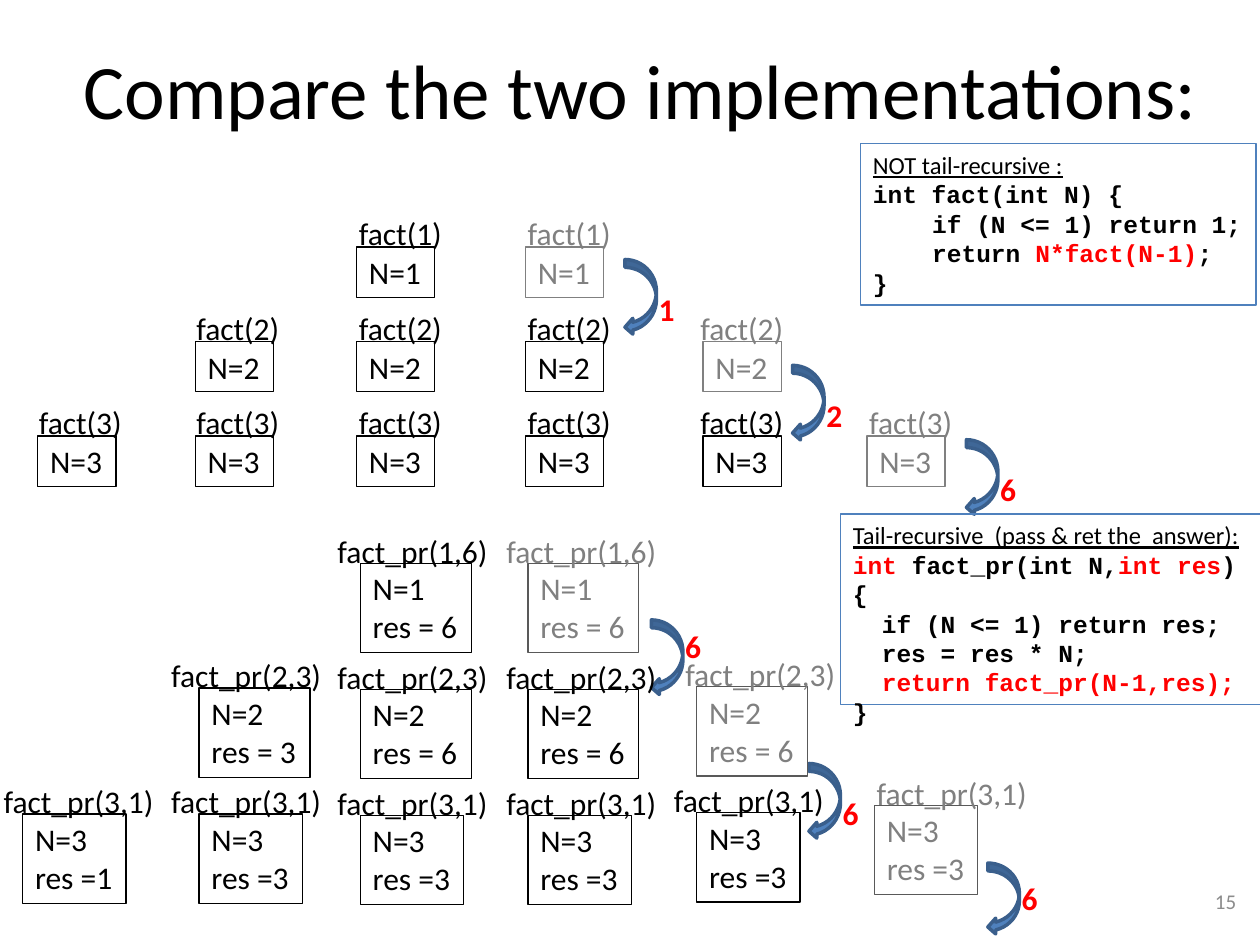
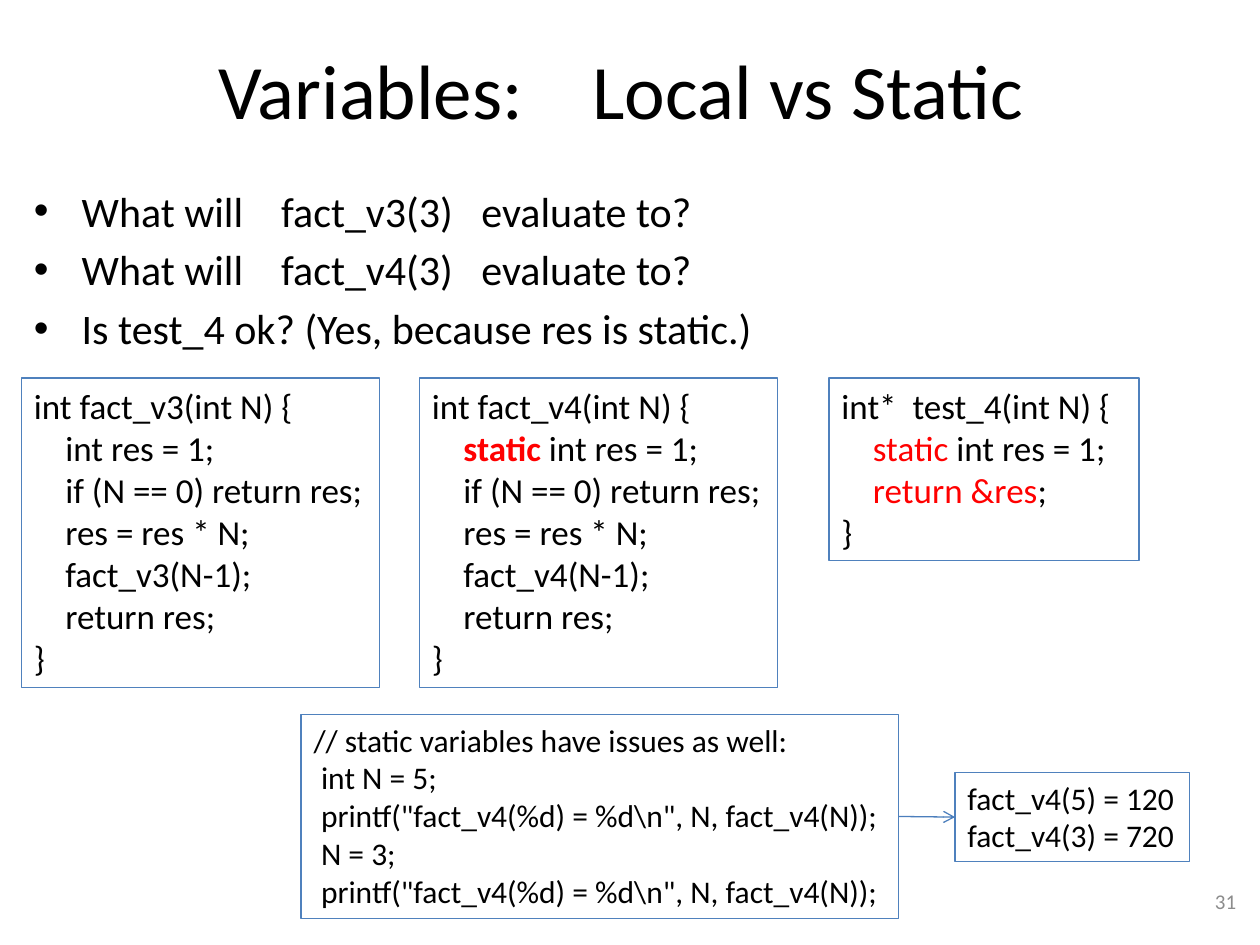
from dataclasses import dataclass
from lxml.etree import SubElement
from pptx import Presentation
from pptx.dml.color import RGBColor
from pptx.enum.shapes import MSO_CONNECTOR, MSO_SHAPE
from pptx.enum.text import MSO_ANCHOR, MSO_AUTO_SIZE, PP_ALIGN
from pptx.oxml.ns import qn
from pptx.util import Inches, Pt


@dataclass(frozen=True)
class Theme:
    sans: str = "Calibri"
    mono: str = "Courier New"
    ink: str = "000000"
    red: str = "FF0000"
    ghost: str = "808080"
    edge: str = "595959"
    page: str = "8C8C8C"
    blue: str = "4F81BD"
    rim: str = "3A5F8C"
    link: str = "4B7EBC"
    title: int = 44
    list: int = 24
    code: int = 20
    frame: int = 18
    small: int = 14
    foot: int = 12
    thin: float = 0.75


@dataclass(frozen=True)
class Run:
    text: str
    color: str = None
    bold: bool = None
    under: bool = None
    font: str = None


@dataclass(frozen=True)
class Line:
    runs: tuple
    indent: float = 0


THEME = Theme()


def rgb(code):
    return RGBColor.from_string(code)


def place(left, top, width, height):
    return [Inches(value) for value in (left, top, width, height)]


def code(*runs, indent=0):
    return Line(runs, indent)


def red(text, bold=None):
    return Run(text, THEME.red, bold)


def write(shape, lines, size, color=THEME.ink, font=THEME.sans, bold=False,
          wrap=False, fit=True, align=PP_ALIGN.LEFT, anchor=MSO_ANCHOR.TOP):
    frame = shape.text_frame
    frame.word_wrap = wrap
    frame.auto_size = MSO_AUTO_SIZE.SHAPE_TO_FIT_TEXT if fit else MSO_AUTO_SIZE.NONE
    frame.vertical_anchor = anchor
    for index, line in enumerate(lines):
        line = line if isinstance(line, Line) else code(line)
        para = frame.add_paragraph() if index else frame.paragraphs[0]
        para.alignment = align
        if line.indent:
            para._p.get_or_add_pPr().set("marL", str(Inches(line.indent)))
        for item in line.runs:
            item = item if isinstance(item, Run) else Run(item)
            run = para.add_run()
            run.text = item.text
            run.font.name = item.font or font
            run.font.size = Pt(size)
            run.font.bold = bold if item.bold is None else item.bold
            run.font.underline = item.under
            run.font.color.rgb = rgb(item.color or color)
    return shape


def text(slide, spot, lines, size, **style):
    return write(slide.shapes.add_textbox(*place(*spot)), lines, size, **style)


def box(slide, spot, lines, size, border=THEME.blue, **style):
    shape = slide.shapes.add_shape(MSO_SHAPE.RECTANGLE, *place(*spot))
    shape.shadow.inherit = False
    shape.fill.background()
    shape.line.color.rgb = rgb(border)
    shape.line.width = Pt(THEME.thin)
    return write(shape, lines, size, **style)


def start(deck, title, page, width=9):
    slide = deck.slides.add_slide(deck.slide_layouts[6])
    text(slide, (0.5, 0.08, width, 1.25), [title], THEME.title, wrap=True,
         fit=False, align=PP_ALIGN.CENTER, anchor=MSO_ANCHOR.MIDDLE)
    text(slide, (7.58, 6.95, 2.33, 0.4), [page], THEME.foot, color=THEME.page,
         wrap=True, fit=False, align=PP_ALIGN.RIGHT, anchor=MSO_ANCHOR.MIDDLE)
    return slide


def hook(slide, left, top, value, drop=0.19, height=0.6):
    arrow = slide.shapes.add_shape(MSO_SHAPE.CURVED_LEFT_ARROW,
                                   *place(left, top, 0.25, height))
    arrow.shadow.inherit = False
    arrow.fill.solid()
    arrow.fill.fore_color.rgb = rgb(THEME.blue)
    arrow.line.color.rgb = rgb(THEME.rim)
    arrow.line.width = Pt(2)
    text(slide, (left + 0.17, top + drop, 0.33, 0.4), [value], THEME.frame,
         color=THEME.red, bold=True)


def call(slide, label, name, wide, spot, lines, ghost, edge):
    color = THEME.ghost if ghost else THEME.ink
    box(slide, spot, lines, THEME.frame, color=color,
        border=edge if ghost else THEME.ink)
    text(slide, (*label, wide, 0.4), [name], THEME.frame, color=color)


def stacks(depths):
    for column, depth in enumerate(depths):
        for level in range(depth):
            yield column, level, column >= 3 and level == depth - 1


def plain(slide, depths):
    lefts = (0.3, 1.55, 2.83, 4.17, 5.58, 6.88)
    labels = (0.21, 1.46, 2.75, 4.09, 5.46, 6.8)
    for column, level, ghost in stacks(depths):
        n, top = 3 - level, 3.46 - 0.75 * level
        call(slide, (labels[column], top - 0.31), f"fact({n})", 0.87,
             (lefts[column], top, 0.62, 0.4), [f"N={n}"], ghost, THEME.ghost)
    for left, top, value in ((4.96, 2.06, "1"), (6.29, 2.9, "2"), (7.67, 3.49, "6")):
        hook(slide, left, top, value)


def tail(slide, depths):
    hook(slide, 5.17, 4.92, "6", drop=0.01)
    hook(slide, 6.42, 6.06, "6")
    hook(slide, 7.84, 6.85, "6", drop=0.08, height=0.57)
    lefts = (0.18, 1.58, 2.86, 4.19, 5.53, 6.94)
    labels = (-0.07, 1.26, 2.58, 3.92, 5.25, 6.86)
    bases = (6.46, 6.46, 6.47, 6.47, 6.45, 6.39)
    for column, level, ghost in stacks(depths):
        n, seed = 3 - level, (1, 3, 6)[level]
        top = bases[column] - level
        if level == 0:
            result = "res =1" if column == 0 else "res =3"
        else:
            result = "res = 3" if column == 1 else "res = 6"
        shift = 0.09 if column == 4 and ghost else 0
        call(slide, (labels[column] + shift, top - 0.3), f"fact_pr({n},{seed})", 1.41,
             (lefts[column], top, 0.88 if level else 0.82, 0.71),
             [f"N={n}", result], ghost, THEME.edge)


def listing(slide, spot, head, lines, wrap):
    title = Run(head, bold=False, under=True, font=THEME.sans)
    box(slide, spot, [title, *lines], THEME.small, font=THEME.mono, bold=True, wrap=wrap)


def compare(deck):
    slide = start(deck, "Compare the two implementations:", "15", 9.17)
    depths = (1, 2, 3, 3, 2, 1)
    tail(slide, depths)
    plain(slide, depths)
    listing(slide, (6.67, 4.08, 3.35, 1.51), "Tail-recursive  (pass & ret the  answer):", [
        code(red("int "), "fact_pr(int N,", red("int res"), "){"),
        code("if (N <= 1) return res;", indent=0.23),
        code("res = res * N;", indent=0.23),
        code(red("return fact_pr(N-1,res);"), indent=0.23),
        "}"], True)
    listing(slide, (6.83, 1.14, 3.14, 1.28), "NOT tail-recursive :", [
        "int fact(int N) {",
        code("if (N <= 1) return 1;", indent=0.47),
        code("return ", red("N*fact(N-1)"), ";", indent=0.47),
        "}"], False)


def bullets(slide, spot, lines):
    shape = text(slide, spot, lines, THEME.list, wrap=True, fit=False)
    for para in shape.text_frame.paragraphs:
        para.space_before = Pt(4.8)
        props = para._p.get_or_add_pPr()
        props.set("marL", str(Inches(0.38)))
        props.set("indent", str(Inches(-0.38)))
        SubElement(props, qn("a:buFont"), typeface="Arial")
        SubElement(props, qn("a:buChar"), char="•")


def join(slide, first, last):
    line = slide.shapes.add_connector(MSO_CONNECTOR.STRAIGHT, 0, 0, 0, 0)
    line.begin_connect(first, 3)
    line.end_connect(last, 1)
    line.line.color.rgb = rgb(THEME.link)
    line.line.width = Pt(THEME.thin)
    SubElement(line.line._get_or_add_ln(), qn("a:tailEnd"), type="arrow")
    SubElement(line._element.spPr, qn("a:effectLst"))


def body(name, first):
    inner = ("if (N == 0) return res;", "res = res * N;", f"{name}(N-1);", "return res;")
    return [f"int {name}(int N) {{", first,
            *(code(line, indent=0.25) for line in inner), "}"]


def static(deck):
    slide = start(deck, "Variables:    Local vs Static ", "31")
    bullets(slide, (0.17, 1.42, 9, 1.5), [
        "What will    fact_v3(3)   evaluate to?",
        "What will    fact_v4(3)   evaluate to?",
        "Is test_4 ok? (Yes, because res is static.)"])
    local = "int res = 1;"
    box(slide, (0.17, 3, 2.84, 2.46),
        body("fact_v3", code(local, indent=0.25)), THEME.code)
    box(slide, (3.33, 3, 2.84, 2.46),
        body("fact_v4", code(red("static ", True), local, indent=0.25)), THEME.code)
    box(slide, (6.58, 3, 2.46, 1.45), [
        "int*  test_4(int N) {",
        code(red("static "), local, indent=0.25),
        code(red("return &res"), ";", indent=0.25),
        "}"], THEME.code)
    show = r'printf("fact_v4(%d) = %d\n", N, fact_v4(N));'
    steps = ("int N = 5;", show, "N = 3;", show)
    test = box(slide, (2.39, 5.67, 4.74, 1.62), [
        "// static variables have issues as well:",
        *(code(step, indent=0.06) for step in steps)], THEME.frame)
    result = box(slide, (7.58, 6.13, 1.86, 0.71),
                 ["fact_v4(5) = 120", "fact_v4(3) = 720"], THEME.frame)
    join(slide, test, result)


def main():
    deck = Presentation()
    deck.slide_width, deck.slide_height = Inches(10), Inches(7.5)
    compare(deck)
    static(deck)
    deck.save("out.pptx")


if __name__ == "__main__":
    main()
